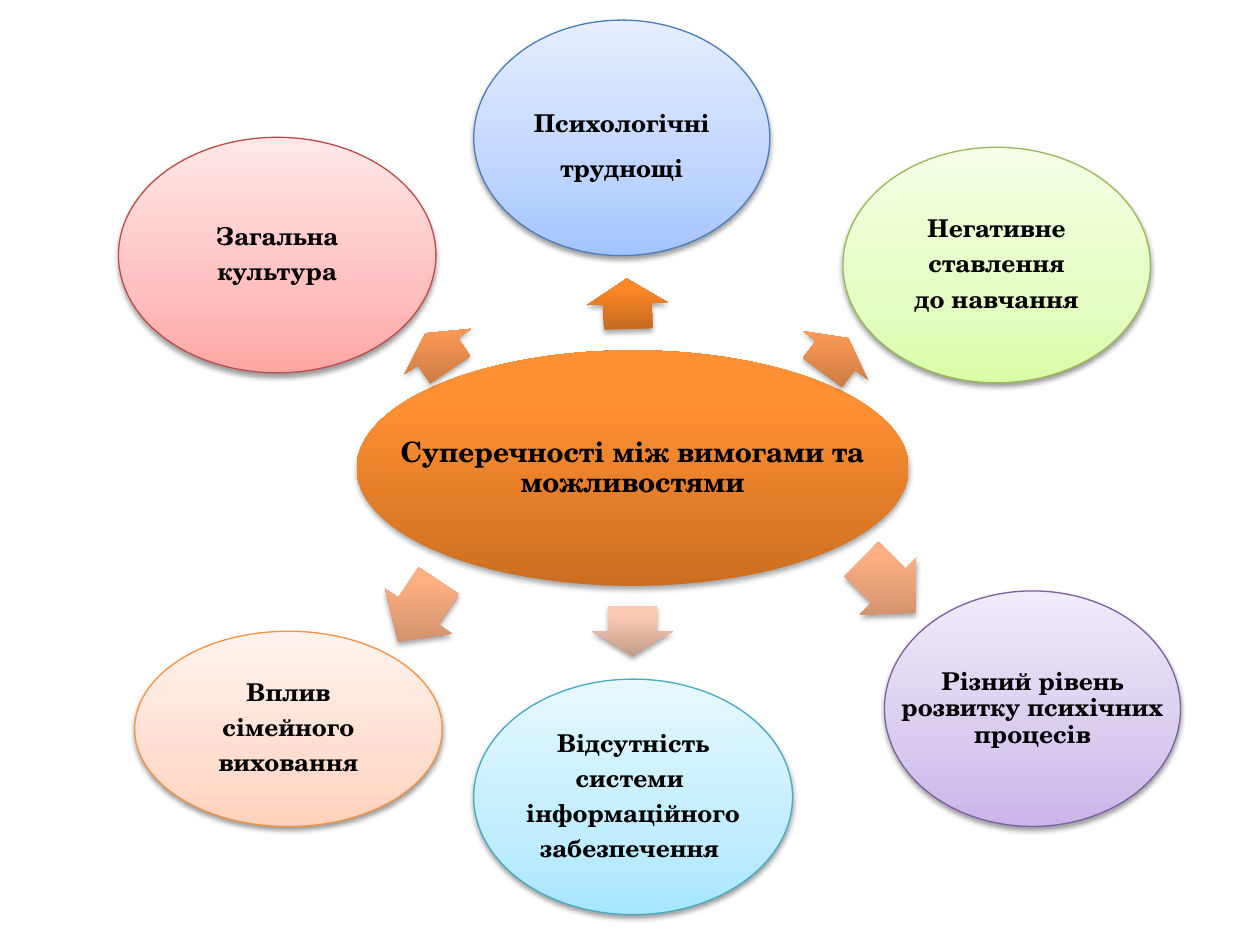
from copy import deepcopy

from pptx import Presentation
from pptx import oxml as ox
from pptx import util as u
from pptx.dml.color import RGBColor
from pptx.enum import shapes, text
from pptx.oxml import ns

Pt = u.Pt

# Colours: gradients run from the bottom up
BLACK = RGBColor(0x00, 0x00, 0x00)


def colours(*codes):
    return [RGBColor.from_string(code) for code in codes]


ORANGE = colours("CC6E20", "FF9034", "FF9136")
STRONG = colours("C3691F", "FD8828", "FF8928")
MEDIUM = colours("C47742", "FE9A55", "FF9B56")
SOFT = colours("C38765", "FEB083", "FFB084")
PALE = colours("C29C8A", "FCCAB3", "FECAB2")
BLUE = colours("A4C4FF", "BFD4FF", "E6EEFF")
GREEN = colours("DAFDA7", "E4FCC2", "F5FFE7")
PURPLE = colours("C9B5E8", "D8CBEE", "F0EAF9")
CYAN = colours("A7E6FF", "C1EDFF", "E7F8FF")
PEACH = colours("FFD2BD", "FFDED0", "FFF2ED")
RED = colours("FFA6A5", "FFC0BF", "FFE7E7")
(BLUE_LINE, GREEN_LINE, PURPLE_LINE, CYAN_LINE, PEACH_LINE, RED_LINE) = colours(
    "4B7EBC", "98B955", "7D60A0", "46AAC5", "F69240", "BF4C48")

OVAL_HEIGHT = 134.6
ARROW_HEIGHT = 46.1


class Diagram:
    font = "TeX Gyre Schola"
    inset = Pt(1.4)

    def __init__(self, page):
        self.page = page

    def shape(self, kind, place, shades, middle, alpha):
        """Shape with a three-stop upright gradient and a soft shadow."""
        shape = self.page.shapes.add_shape(kind, *map(Pt, place))
        shape.line.fill.background()
        shape.fill.gradient()
        shape.fill.gradient_angle = 90
        gradient = shape._element.spPr.find(ns.qn("a:gradFill"))
        gradient.set("rotWithShape", "0")
        stop_list = gradient.find(ns.qn("a:gsLst"))
        stop_list.append(deepcopy(stop_list[0]))
        for stop, position, shade in zip(shape.fill.gradient_stops, (0, middle, 1), shades):
            stop.position = position
            stop.color.rgb = shade
        shape.shadow.inherit = False
        effects = shape._element.spPr.find(ns.qn("a:effectLst"))
        effects.append(ox.parse_xml(
            f'<a:outerShdw {ns.nsdecls("a")} blurRad="{Pt(3.1)}" dist="{Pt(1.8)}" '
            'dir="5400000" rotWithShape="0"><a:srgbClr val="000000">'
            f'<a:alpha val="{alpha * 1000}"/></a:srgbClr></a:outerShdw>'))
        return shape

    def label(self, place, words, size, spacing):
        box = self.page.shapes.add_textbox(*map(Pt, place))
        frame = box.text_frame
        frame.word_wrap = True
        frame.vertical_anchor = text.MSO_ANCHOR.MIDDLE
        frame.margin_left = frame.margin_right = self.inset
        frame.margin_top = frame.margin_bottom = self.inset
        frame.text = words
        for para in frame.paragraphs:
            para.alignment = text.PP_ALIGN.CENTER
            para.line_spacing = spacing
            para.space_after = Pt(0.35 * size)
            for span in para.runs:
                span.font.name = self.font
                span.font.size = Pt(size)
                span.font.bold = True
                span.font.color.rgb = BLACK

    def hub(self, place, words):
        self.shape(shapes.MSO_SHAPE.OVAL, place, ORANGE, 0.8, 35)
        self.label(place, words, 16, 0.9)

    def oval(self, place, shades, line, words, spacing=0.9):
        oval = self.shape(shapes.MSO_SHAPE.OVAL, place, shades, 0.35, 38)
        oval.line.color.rgb = line
        oval.line.width = Pt(0.75)
        self.label(place, words, 14, spacing)

    def arrow(self, left, top, length, angle, shades):
        arrow = self.shape(shapes.MSO_SHAPE.RIGHT_ARROW,
                           (left, top, length, ARROW_HEIGHT), shades, 0.8, 35)
        arrow.adjustments[0] = 0.6
        arrow.adjustments[1] = 0.5
        arrow.rotation = angle


def main():
    deck = Presentation()
    deck.slide_width, deck.slide_height = Pt(720), Pt(540)
    diagram = Diagram(deck.slides.add_slide(deck.slide_layouts[6]))

    # Central theme
    diagram.hub((203.8, 200.2, 315.4, OVAL_HEIGHT),
                "Суперечності між вимогами та можливостями")

    # Arrows, clockwise from the top
    diagram.arrow(344.2, 150.5, 28.8, 268.2, STRONG)
    diagram.arrow(465.1, 180, 24.5, 306.7, MEDIUM)
    diagram.arrow(486, 311.8, 43.2, 44.9, SOFT)
    diagram.arrow(347, 337.7, 28.8, 90, PALE)
    diagram.arrow(218.2, 326.2, 41.8, 123.8, SOFT)
    diagram.arrow(237.6, 177.8, 25.2, 235.8, MEDIUM)

    # Outer ovals, clockwise from the top
    diagram.oval((270.7, 11.5, 169.2, OVAL_HEIGHT), BLUE, BLUE_LINE,
                 "Психологічні труднощі", spacing=1.5)
    diagram.oval((481.7, 84.2, 175.7, OVAL_HEIGHT), GREEN, GREEN_LINE,
                 "Негативне\ncтавлення\nдо навчання")
    diagram.oval((505.4, 337.7, 169.2, OVAL_HEIGHT), PURPLE, PURPLE_LINE,
                 "Різний рівень розвитку психічних процесів")
    diagram.oval((270.7, 388.1, 182.2, OVAL_HEIGHT), CYAN, CYAN_LINE,
                 "Відсутність\nсистеми \nінформаційного\nзабезпечення ")
    diagram.oval((77, 360.7, 175.7, 111.6), PEACH, PEACH_LINE,
                 "Вплив\nсімейного\nвиховання")
    diagram.oval((67.7, 78.5, 181.4, OVAL_HEIGHT), RED, RED_LINE,
                 "Загальна\nкультура")

    deck.save("out.pptx")


if __name__ == "__main__":
    main()
